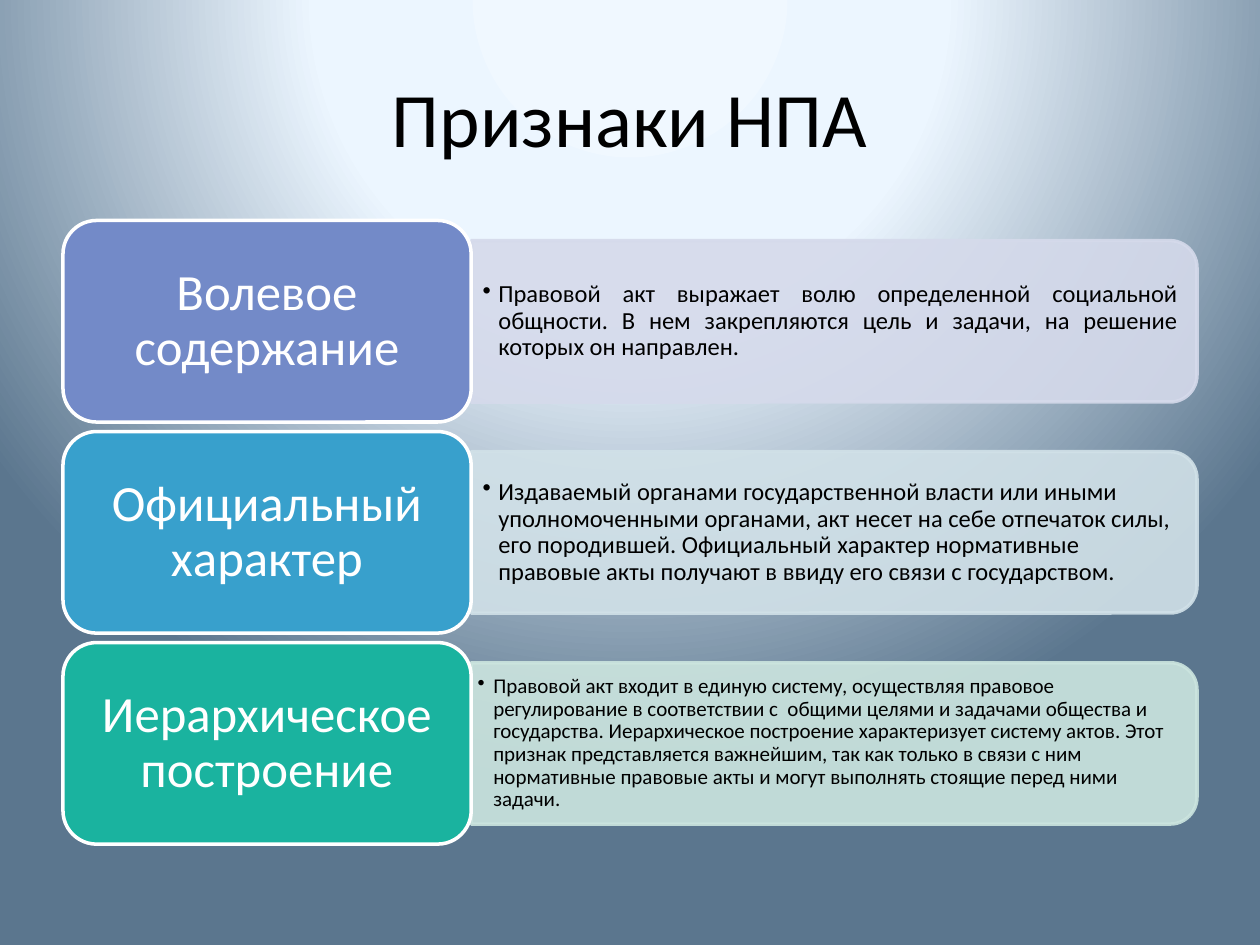
"""Builds the slide on the three features of a legal act."""
import pptx
import pptx.dml.color
import pptx.enum.shapes
import pptx.enum.text
import pptx.oxml
import pptx.oxml.ns
import pptx.util

Pt = pptx.util.Pt
ALIGN = pptx.enum.text.PP_ALIGN
SHAPE = pptx.enum.shapes.MSO_SHAPE
FONT = "Calibri"
COLORS = {
    "text": "000000", "white": "FFFFFF",
    "glow": "F0F8FF", "sky": "ECF6FF", "slate": "5B768E",
    "violet": "738AC8", "violet_pale": "D5DAEB",
    "blue": "38A0CC", "blue_pale": "D1E1E8",
    "green": "1AB39F", "green_pale": "CCE5DF",
}
LEFT, TOP, PITCH = 36, 126, 120.6
LABEL_WIDTH, LABEL_HEIGHT = 233.3, 115.2
PANEL_WIDTH, PANEL_HEIGHT = 414.7, 92.2
TEXT_WIDTH, TEXT_HEIGHT = 410.4, 82.8
FEATURES = [
    ("Волевое содержание", "violet",
     "Правовой акт выражает волю определенной социальной общности. В нем "
     "закрепляются цель и задачи, на решение которых он направлен.",
     {"size": 14, "alignment": ALIGN.JUSTIFY, "insets": (6.5, 3)}),
    ("Официальный характер", "blue",
     "Издаваемый органами государственной власти или иными уполномоченными "
     "органами, акт несет на себе отпечаток силы, его породившей. Официальный "
     "характер нормативные правовые акты получают в ввиду его связи с государством.",
     {"size": 14, "alignment": ALIGN.LEFT, "insets": (6.5, 3)}),
    ("Иерархическое построение", "green",
     "Правовой акт входит в единую систему, осуществляя правовое регулирование "
     "в соответствии с  общими целями и задачами общества и государства. "
     "Иерархическое построение характеризует систему актов. Этот признак "
     "представляется важнейшим, так как только в связи с ним нормативные "
     "правовые акты и могут выполнять стоящие перед ними задачи.",
     {"size": 12, "alignment": ALIGN.LEFT, "insets": (3.6, 2)}),
]


def rgb(name):
    """Return the named colour."""
    return pptx.dml.color.RGBColor.from_string(COLORS[name])


def apply(target, values):
    """Set attributes from a dict of format values."""
    for name, value in values.items():
        setattr(target, name, value)


def set_background(slide):
    """Fill the slide with a radial gradient centred above its top edge."""
    stops = "".join(
        f'<a:gs pos="{position}"><a:srgbClr val="{COLORS[name]}"/></a:gs>'
        for position, name in ((0, "glow"), (40000, "sky"), (100000, "slate")))
    slide.background.fill.gradient()
    properties = slide.background.fill._xPr
    gradient = pptx.oxml.parse_xml(
        f'<a:gradFill {pptx.oxml.ns.nsdecls("a")} rotWithShape="1"><a:gsLst>{stops}</a:gsLst>'
        '<a:path path="circle"><a:fillToRect l="50000" t="-80000" r="50000" b="180000"/>'
        '</a:path></a:gradFill>')
    properties.replace(properties.find(pptx.oxml.ns.qn("a:gradFill")), gradient)


def write_text(shape, text, size, color, alignment, insets, spacing):
    """Put one formatted paragraph in a shape and return it."""
    horizontal, vertical = insets
    apply(shape.text_frame, {
        "text": text, "word_wrap": True,
        "vertical_anchor": pptx.enum.text.MSO_ANCHOR.MIDDLE,
        "margin_left": Pt(horizontal), "margin_right": Pt(horizontal),
        "margin_top": Pt(vertical), "margin_bottom": Pt(vertical),
    })
    paragraph = shape.text_frame.paragraphs[0]
    apply(paragraph, {"alignment": alignment, "line_spacing": spacing})
    font = paragraph.runs[0].font
    apply(font, {"name": FONT, "size": Pt(size)})
    font.color.rgb = rgb(color)
    return paragraph


def add_block(slide, kind, box, fill, line):
    """Add a filled and outlined shape without a shadow."""
    shape = slide.shapes.add_shape(kind, *map(Pt, box))
    shape.shadow.inherit = False
    shape.fill.solid()
    shape.fill.fore_color.rgb = rgb(fill)
    shape.line.color.rgb = rgb(line)
    shape.line.width = Pt(2)
    return shape


def add_panel(slide, left, middle, color):
    """Add a translucent panel with rounded right corners."""
    box = (left + (PANEL_WIDTH - PANEL_HEIGHT) / 2, middle - PANEL_WIDTH / 2,
           PANEL_HEIGHT, PANEL_WIDTH)
    panel = add_block(slide, SHAPE.ROUND_2_SAME_RECTANGLE, box, color, color)
    panel.rotation = 90
    for element in panel._element.spPr.iter(pptx.oxml.ns.qn("a:srgbClr")):
        element.append(pptx.oxml.parse_xml(
            f'<a:alpha {pptx.oxml.ns.nsdecls("a")} val="90000"/>'))


def add_description(slide, left, middle, text, style):
    """Add a bulleted description over a panel."""
    box = (left, middle - TEXT_HEIGHT / 2, TEXT_WIDTH, TEXT_HEIGHT)
    textbox = slide.shapes.add_textbox(*map(Pt, box))
    paragraph = write_text(textbox, text, color="text", spacing=0.9, **style)
    properties = paragraph._p.get_or_add_pPr()
    properties.set("marL", str(Pt(9)))
    properties.set("indent", str(Pt(-9)))
    properties.append(pptx.oxml.parse_xml(
        f'<a:buChar {pptx.oxml.ns.nsdecls("a")} char="•"/>'))


def add_feature(slide, index, label, color, description, style):
    """Add one row: panel, description and label."""
    top = TOP + index * PITCH
    middle = top + LABEL_HEIGHT / 2
    right = LEFT + LABEL_WIDTH
    add_panel(slide, right, middle, color + "_pale")
    add_description(slide, right, middle, description, style)
    box = (LEFT, top, LABEL_WIDTH, LABEL_HEIGHT)
    block = add_block(slide, SHAPE.ROUNDED_RECTANGLE, box, color, "white")
    write_text(block, label, 29, "white", ALIGN.CENTER, (8.6, 4.3), 0.9)


def main():
    """Build and save the presentation."""
    presentation = pptx.Presentation()
    apply(presentation, {"slide_width": Pt(720), "slide_height": Pt(540)})
    slide = presentation.slides.add_slide(presentation.slide_layouts[5])
    set_background(slide)
    title = slide.shapes.title
    apply(title, {"left": Pt(36), "top": Pt(21.6), "width": Pt(648), "height": Pt(90)})
    write_text(title, "Признаки НПА", 44, "text", ALIGN.CENTER, (7.2, 3.6), 1.0)
    for index, feature in enumerate(FEATURES):
        add_feature(slide, index, *feature)
    presentation.save("out.pptx")


if __name__ == "__main__":
    main()
